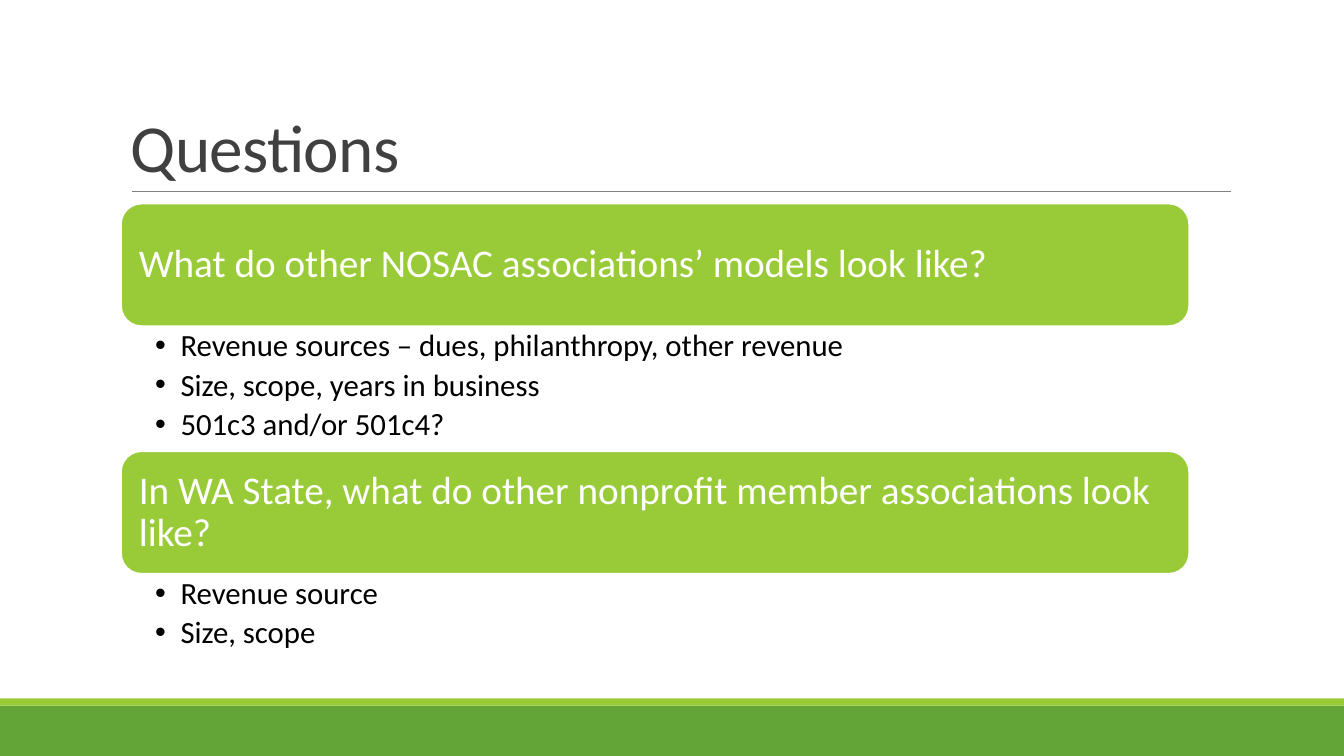
from dataclasses import dataclass

from lxml.etree import SubElement
from pptx import Presentation
from pptx.dml.color import RGBColor
from pptx.enum.shapes import MSO_CONNECTOR, MSO_SHAPE
from pptx.enum.text import MSO_ANCHOR as Anchor, PP_ALIGN as Align
from pptx.oxml.ns import qn
from pptx.util import Cm, Pt


@dataclass(frozen=True)
class Theme:
    font: str = "Calibri"
    lime: RGBColor = RGBColor(0x99, 0xCB, 0x38)
    green: RGBColor = RGBColor(0x63, 0xA5, 0x37)
    gray: RGBColor = RGBColor(0x80, 0x80, 0x80)
    heading: RGBColor = RGBColor(0x40, 0x40, 0x40)
    white: RGBColor = RGBColor(0xFF, 0xFF, 0xFF)
    black: RGBColor = RGBColor(0, 0, 0)
    title_size: Pt = Pt(48)
    question_size: Pt = Pt(28)
    point_size: Pt = Pt(22)


THEME = Theme()
WIDTH, HEIGHT = 33.87, 19.05
LEFT, BLOCK_WIDTH = 3.05, 26.92
FIRST_TOP, BANNER_HEIGHT = 5.13, 3.09

# Each question has its points and the height of their area in centimetres.
QUESTIONS = [
    ("What do other NOSAC associations’ models look like?",
     ["Revenue sources – dues, philanthropy, other revenue",
      "Size, scope, years in business",
      "501c3 and/or 501c4?"], 3.15),
    ("In WA State, what do other nonprofit member associations look like?",
     ["Revenue source", "Size, scope"], 2.08),
]


def set_margins(frame, left, top, right, bottom):
    frame.margin_left, frame.margin_top = Cm(left), Cm(top)
    frame.margin_right, frame.margin_bottom = Cm(right), Cm(bottom)


def style_paragraph(paragraph, size, color, line_spacing, space_after=0):
    paragraph.alignment = Align.LEFT
    paragraph.line_spacing = line_spacing
    paragraph.space_after = Pt(space_after)
    font = paragraph.font
    font.name, font.size = THEME.font, size
    font.color.rgb = color


def add_block(slide, kind, left, top, width, height, fill):
    block = slide.shapes.add_shape(kind, Cm(left), Cm(top), Cm(width), Cm(height))
    block.shadow.inherit = False
    block.fill.solid()
    block.fill.fore_color.rgb = fill
    block.line.fill.background()
    return block


def add_text_area(slide, left, top, width, height):
    area = slide.shapes.add_textbox(Cm(left), Cm(top), Cm(width), Cm(height))
    area.text_frame.word_wrap = True
    return area.text_frame


def add_title(slide, text):
    frame = add_text_area(slide, LEFT, 0.79, 27.94, 4.04)
    frame.vertical_anchor = Anchor.BOTTOM
    title = frame.paragraphs[0]
    title.text = text
    style_paragraph(title, THEME.title_size, THEME.heading, 0.85)
    title.runs[0].font._element.set("spc", "-50")


def add_rule(slide, left, right, y):
    rule = slide.shapes.add_connector(
        MSO_CONNECTOR.STRAIGHT, Cm(left), Cm(y), Cm(right), Cm(y))
    rule.line.color.rgb = THEME.gray
    rule.line.width = Pt(0.5)
    SubElement(rule._element.spPr, qn("a:effectLst"))


def add_question(slide, text, top):
    banner = add_block(slide, MSO_SHAPE.ROUNDED_RECTANGLE,
                       LEFT, top, BLOCK_WIDTH, BANNER_HEIGHT, THEME.lime)
    banner.line.color.rgb = THEME.white
    banner.line.width = Pt(1.25)
    frame = banner.text_frame
    frame.word_wrap = True
    frame.vertical_anchor = Anchor.MIDDLE
    set_margins(frame, 0.3, 0.3, 0.3, 0.3)
    question = frame.paragraphs[0]
    question.text = text
    style_paragraph(question, THEME.question_size, THEME.white, 0.9)


def add_points(slide, points, top, height):
    frame = add_text_area(slide, LEFT, top, BLOCK_WIDTH, height)
    set_margins(frame, 0.86, 0.1, 0.56, 0.1)
    frame.text = "\n".join(points)
    for point in frame.paragraphs:
        point.level = 1
        properties = point._element.get_or_add_pPr()
        properties.set("marL", str(Cm(0.64)))
        properties.set("indent", str(-Cm(0.64)))
        SubElement(properties, qn("a:buFont"), typeface="Arial")
        SubElement(properties, qn("a:buChar"), char="•")
        style_paragraph(point, THEME.point_size, THEME.black, 0.9, 4.4)


def main():
    deck = Presentation()
    deck.slide_width, deck.slide_height = Cm(WIDTH), Cm(HEIGHT)
    slide = deck.slides.add_slide(deck.slide_layouts[6])

    add_block(slide, MSO_SHAPE.RECTANGLE, 0, 17.78, WIDTH, 1.27, THEME.green)
    add_block(slide, MSO_SHAPE.RECTANGLE, 0, 17.6, WIDTH, 0.18, THEME.lime)
    add_rule(slide, 3.33, 31.01, 4.83)
    add_title(slide, "Questions")

    top = FIRST_TOP
    for question, points, points_height in QUESTIONS:
        add_question(slide, question, top)
        add_points(slide, points, top + BANNER_HEIGHT, points_height)
        top += BANNER_HEIGHT + points_height

    deck.save("out.pptx")


if __name__ == "__main__":
    main()
